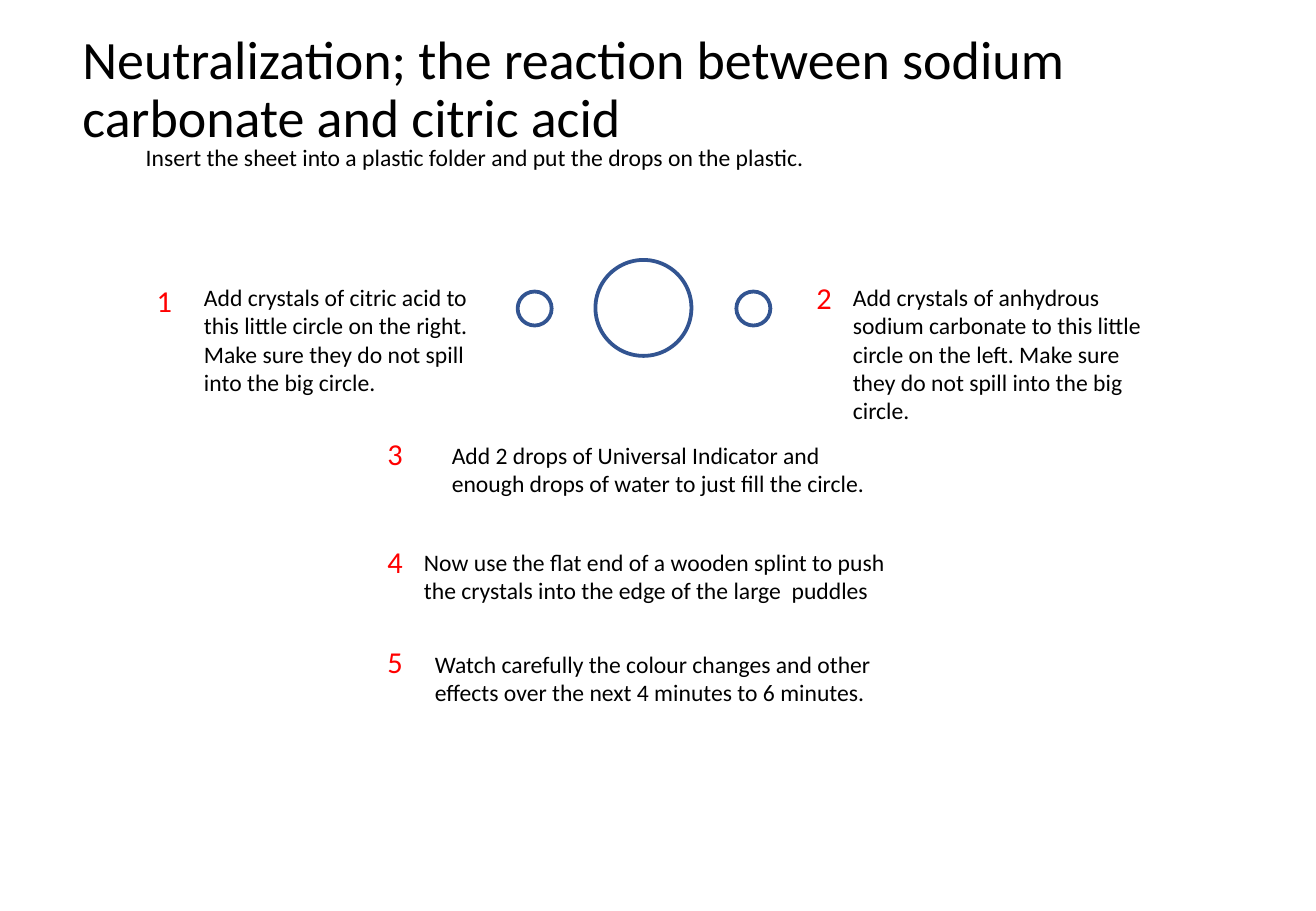
from dataclasses import dataclass

from pptx import Presentation
from pptx.dml.color import RGBColor
from pptx.enum.shapes import MSO_SHAPE as Shape
from pptx.enum.text import MSO_ANCHOR as Anchor, MSO_AUTO_SIZE as AutoSize
from pptx.slide import Slide
from pptx.util import Emu, Pt

EMU_PER_PX = 9144
FONT = "Calibri"
BLACK, RED, WHITE, BLUE = "000000", "FF0000", "FFFFFF", "325491"


@dataclass(frozen=True)
class Label:
    text: str
    left: int
    top: int
    width: int
    height: int
    size: int = 14
    color: str = BLACK


@dataclass(frozen=True)
class Step:
    number_left: int
    number_top: int
    instruction: Label


@dataclass(frozen=True)
class Circle:
    center_x: int
    diameter: int


TITLE = Label(
    "Neutralization; the reaction between sodium carbonate and citric acid",
    58, 18, 996, 114, size=32,
)
SETUP = Label(
    "Insert the sheet into a plastic folder and put the drops on the plastic.",
    110, 113, 859, 34,
)
STEPS = [
    Step(119, 227, Label(
        "Add crystals of citric acid to this little circle on the right. "
        "Make sure they do not spill into the big circle.",
        158, 228, 259, 104)),
    Step(662, 225, Label(
        "Add crystals of anhydrous sodium carbonate to this little circle on the left. "
        "Make sure they do not spill into the big circle.",
        692, 228, 259, 128)),
    Step(309, 353, Label(
        "Add 2 drops of Universal Indicator and enough drops of water to just fill the circle.",
        362, 358, 370, 57)),
    Step(309, 442, Label(
        "Now use the flat end of a wooden splint to push the crystals "
        "into the edge of the large  puddles",
        339, 446, 415, 57)),
    Step(309, 525, Label(
        "Watch carefully the colour changes and other effects "
        "over the next 4 minutes to 6 minutes.",
        348, 530, 415, 57)),
]
CIRCLES_CENTER_Y = 254
CIRCLES = [Circle(440, 28), Circle(530, 79), Circle(620, 28)]


def px(length: int) -> Emu:
    return Emu(length * EMU_PER_PX)


def rgb(color: str) -> RGBColor:
    return RGBColor.from_string(color)


def add_label(
    page: Slide,
    label: Label,
    anchor: Anchor = Anchor.TOP,
    auto_size: AutoSize = AutoSize.SHAPE_TO_FIT_TEXT,
    line_spacing: float = 1.0,
) -> None:
    box = page.shapes.add_textbox(
        px(label.left), px(label.top), px(label.width), px(label.height)
    )
    frame = box.text_frame
    frame.word_wrap = True
    frame.auto_size = auto_size
    frame.vertical_anchor = anchor
    para = frame.paragraphs[0]
    para.text = label.text
    para.line_spacing = line_spacing
    para.font.name = FONT
    para.font.size = Pt(label.size)
    para.font.color.rgb = rgb(label.color)


def add_circle(page: Slide, circle: Circle) -> None:
    radius = circle.diameter / 2
    shape = page.shapes.add_shape(
        Shape.OVAL,
        px(round(circle.center_x - radius)),
        px(round(CIRCLES_CENTER_Y - radius)),
        px(circle.diameter),
        px(circle.diameter),
    )
    shape.shadow.inherit = False
    shape.fill.solid()
    shape.fill.fore_color.rgb = rgb(WHITE)
    shape.line.color.rgb = rgb(BLUE)
    shape.line.width = Pt(2.25)


def add_step(page: Slide, number: int, step: Step) -> None:
    add_label(page, step.instruction)
    add_label(
        page,
        Label(str(number), step.number_left, step.number_top, 61, 40, size=18, color=RED),
    )


def main() -> None:
    deck = Presentation()
    deck.slide_width, deck.slide_height = px(1083), px(750)
    page = deck.slides.add_slide(deck.slide_layouts[6])
    add_label(page, TITLE, Anchor.MIDDLE, AutoSize.NONE, line_spacing=0.9)
    for circle in CIRCLES:
        add_circle(page, circle)
    add_label(page, SETUP)
    for number, step in enumerate(STEPS, start=1):
        add_step(page, number, step)
    deck.save("out.pptx")


if __name__ == "__main__":
    main()
